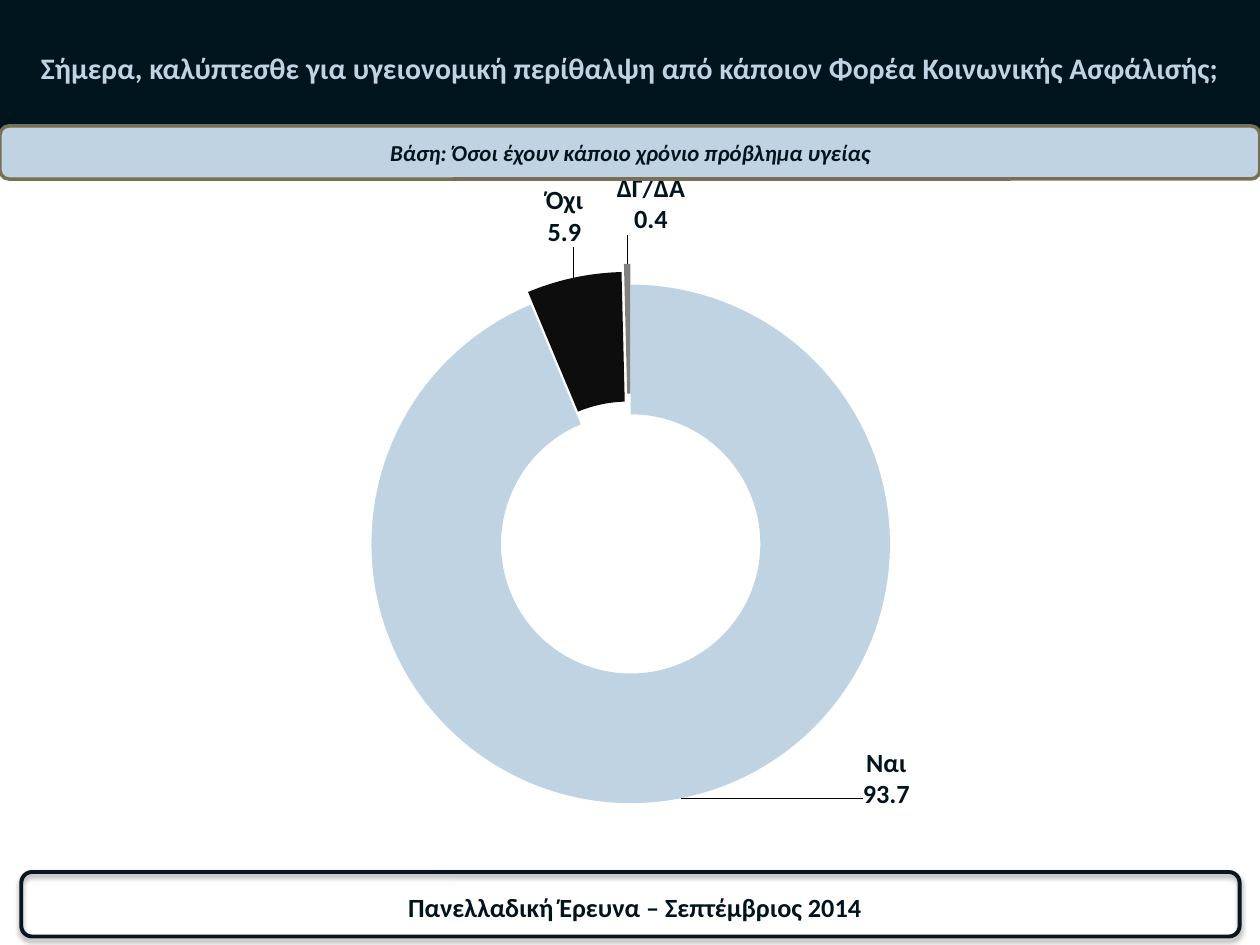
from copy import deepcopy

from pptx import Presentation
from pptx.chart.data import CategoryChartData
from pptx.dml.color import RGBColor
from pptx.enum.chart import XL_CHART_TYPE
from pptx.enum.shapes import MSO_SHAPE
from pptx.enum.text import MSO_ANCHOR, PP_ALIGN
from pptx.oxml import parse_xml
from pptx.oxml.ns import qn
from pptx.util import Cm, Pt

RING = XL_CHART_TYPE.DOUGHNUT
RECT = MSO_SHAPE.RECTANGLE
ROUND = MSO_SHAPE.ROUNDED_RECTANGLE
MID = MSO_ANCHOR.MIDDLE
MAIN = 'xmlns:a="http://schemas.openxmlformats.org/drawingml/2006/main"'
CHART = 'xmlns:c="http://schemas.openxmlformats.org/drawingml/2006/chart"'
FONT = "Calibri"
NAVY = "00141E"
PALE = "BFD3E3"
SLICES = [
    ("Ναι", 93.7, PALE, 0, (0.19, 0.06)),
    ("Όχι", 5.9, "0D0D0D", 10, (-0.02, -0.17)),
    ("ΔΓ/ΔΑ", 0.4, "808080", 16, (0.02, -0.17)),
]


def tint(code):
    return RGBColor.from_string(code)


def style(font, size, code, slant=None):
    font.name, font.size, font.bold, font.italic = FONT, Pt(size), True, slant
    font.color.rgb = tint(code)


def block(slide, kind, box, fill=None, line=None, width=0):
    shape = slide.shapes.add_shape(kind, *map(Cm, box))
    shape.shadow.inherit = False
    if fill:
        shape.fill.solid()
        shape.fill.fore_color.rgb = tint(fill)
    else:
        shape.fill.background()
    if line:
        shape.line.color.rgb = tint(line)
        shape.line.width = Pt(width)
    else:
        shape.line.fill.background()
    return shape


def shade(shape, alpha, gap):
    effect = shape._element.spPr.find(qn("a:effectLst"))
    effect.append(parse_xml(
        f'<a:outerShdw {MAIN} blurRad="{Pt(3.1)}" dist="{Pt(gap)}" dir="5400000" rotWithShape="0">'
        f'<a:srgbClr val="000000"><a:alpha val="{alpha * 1000}"/></a:srgbClr></a:outerShdw>'))


def write(shape, text, size, code, slant=None):
    frame = shape.text_frame
    frame.word_wrap = True
    frame.vertical_anchor = MID
    para = frame.paragraphs[0]
    para.text = text
    para.alignment = PP_ALIGN.CENTER
    style(para.font, size, code, slant)


def header(slide, box):
    bar = block(slide, RECT, box, NAVY)
    shade(bar, 35, 1.8)
    write(bar, "Σήμερα, καλύπτεσθε για υγειονομική περίθαλψη από κάποιον "
               "Φορέα Κοινωνικής Ασφάλισής;", 17, PALE)


def base(slide, box):
    pill = block(slide, ROUND, box, PALE, "786F54", 2)
    write(pill, "Βάση: Όσοι έχουν κάποιο χρόνιο πρόβλημα υγείας", 13, NAVY, True)


def footer(slide, box):
    left, top, width, height = box
    shade(block(slide, ROUND, box, None, "0A1520", 2.25), 38, 1.6)
    note = slide.shapes.add_textbox(
        Cm(left + 4.65), Cm(top + 0.25), Cm(width - 9.12), Cm(height - 0.41))
    write(note, "Πανελλαδική Έρευνα – Σεπτέμβριος 2014", 15, NAVY)


def node(tag, value):
    return parse_xml(f'<c:{tag} {CHART} val="{value}"/>')


def layout(inner, **sides):
    parts = "".join(f'<c:{tag} val="{value}"/>' for tag, value in sides.items())
    return parse_xml(f'<c:layout {CHART}><c:manualLayout>{inner}{parts}</c:manualLayout></c:layout>')


def label(series):
    labels = series.data_labels
    labels.show_value = labels.show_category_name = True
    labels.number_format = "#,##0.0"
    labels.number_format_is_linked = False
    style(labels.font, 15, NAVY)
    root = labels._element
    lead = root.find(qn("c:showLeaderLines"))
    if lead is None:
        lead = node("showLeaderLines", 1)
        root.append(lead)
    lead.set("val", "1")
    lead.addprevious(parse_xml(f"<c:separator {CHART}>\n</c:separator>"))
    shared = [part for part in root if part is not lead]
    for index, (*_, (x, y)) in enumerate(SLICES):
        item = parse_xml(f"<c:dLbl {CHART}/>")
        item.extend([node("idx", index), layout("", x=x, y=y), *map(deepcopy, shared)])
        root.insert(index, item)


def ring(slide, box):
    data = CategoryChartData(number_format="0.0")
    data.categories = [name for name, *_ in SLICES]
    data.add_series("Series 1", [value for _, value, *_ in SLICES])
    chart = slide.shapes.add_chart(RING, *map(Cm, box), data).chart
    chart.has_legend = chart.has_title = False
    chart.font.name, chart.font.size = FONT, Pt(18)
    chart.font.color.rgb = tint("000000")
    plot = chart.plots[0]
    plot.vary_by_categories = True
    plot._element.find(qn("c:holeSize")).set("val", "37")
    series = plot.series[0]
    for index, (_, _, code, shift, _) in enumerate(SLICES):
        fill = series.points[index].format.fill
        fill.solid()
        fill.fore_color.rgb = tint(code)
        point = series._element.findall(qn("c:dPt"))[index]
        point.find(qn("c:spPr")).addprevious(node("explosion", shift))
    series._element.find(qn("c:dPt")).addprevious(node("explosion", 25))
    label(series)
    area = chart._chartSpace.chart.plotArea
    for old in area.findall(qn("c:layout")):
        area.remove(old)
    inner = '<c:layoutTarget val="inner"/><c:xMode val="edge"/><c:yMode val="edge"/>'
    area.insert(0, layout(inner, x=0.25, y=0.14, w=0.51, h=0.8))


def main():
    deck = Presentation()
    deck.slide_width, deck.slide_height = Cm(25.4), Cm(19.05)
    slide = deck.slides.add_slide(deck.slide_layouts[6])
    header(slide, (0, 0, 25.4, 2.74))
    footer(slide, (0.43, 17.58, 24.56, 1.3))
    ring(slide, (1.07, 2.97, 23.06, 14.81))
    base(slide, (0, 2.54, 25.4, 1.07))
    deck.save("out.pptx")


if __name__ == "__main__":
    main()
